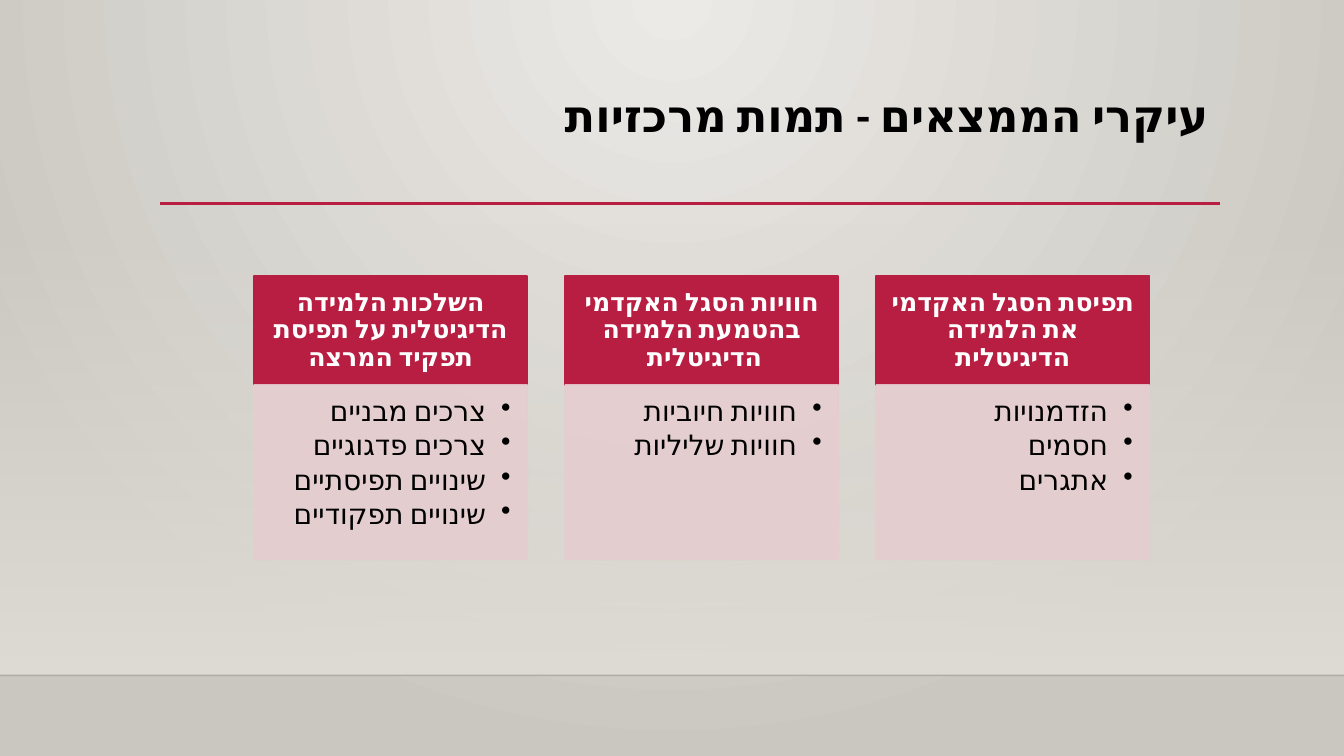
from lxml import etree
from pptx import Presentation
from pptx.dml.color import RGBColor
from pptx.enum.shapes import MSO_CONNECTOR, MSO_SHAPE
from pptx.enum.text import MSO_ANCHOR, PP_ALIGN
from pptx.oxml import parse_xml
from pptx.oxml.ns import nsdecls, qn
from pptx.util import Inches, Pt

RECT = MSO_SHAPE.RECTANGLE
LINE = MSO_CONNECTOR.STRAIGHT
RIGHT, CENTER = PP_ALIGN.RIGHT, PP_ALIGN.CENTER
TOP, MIDDLE = MSO_ANCHOR.TOP, MSO_ANCHOR.MIDDLE

TITLE = "עיקרי הממצאים - תמות מרכזיות"
THEMES = [
    ("תפיסת הסגל האקדמי את הלמידה הדיגיטלית", "Calibri",
     ["הזדמנויות", "חסמים", "אתגרים"]),
    ("חוויות הסגל האקדמי בהטמעת הלמידה הדיגיטלית ", "Cabin",
     ["חוויות חיוביות", "חוויות שליליות"]),
    ("השלכות הלמידה הדיגיטלית על תפיסת תפקיד המרצה", "Cabin",
     ["צרכים מבניים", "צרכים פדגוגיים", "שינויים תפיסתיים", "שינויים תפקודיים"]),
]
COLORS = {"red": "B71E42", "pink": "E6CDCF", "black": "000000", "white": "FFFFFF",
          "light": "ECEAE7", "dark": "CAC7C1", "wall": "DFDBD5", "edge": "000001"}

WIDE, HIGH = 13.33, 7.5
FLOOR = 6.7
WALL = 2.21
LAST, STEP = 8.69, 3.085
COL = 2.71
HEAD_Y, HEAD_H, BODY_H = 2.74, 1.08, 1.73


def rgb(name):
    return RGBColor.from_string(COLORS[name])


def fade(fill, percent):
    tone = fill.find(".//" + qn("a:srgbClr"))
    etree.SubElement(tone, qn("a:alpha"), val=str(percent * 1000))


def blend(first, last, clear, shade):
    alpha = '<a:alpha val="0"/>' if clear else ""
    return parse_xml(
        f'<a:gradFill {nsdecls("a")} rotWithShape="1"><a:gsLst>'
        f'<a:gs pos="0"><a:srgbClr val="{COLORS[first]}">{alpha}</a:srgbClr></a:gs>'
        f'<a:gs pos="100000"><a:srgbClr val="{COLORS[last]}"/></a:gs>'
        f'</a:gsLst>{shade}</a:gradFill>')


def swap(root, grad):
    old = root.find(qn("a:solidFill"))
    root.replace(old, grad)


def add_box(x, y, w, h, color):
    box = slide.shapes.add_shape(RECT, Inches(x), Inches(y), Inches(w), Inches(h))
    box.shadow.inherit = False
    box.fill.solid()
    box.fill.fore_color.rgb = rgb(color)
    return box


def add_line(x1, x2, y, color, width):
    line = slide.shapes.add_connector(LINE, Inches(x1), Inches(y), Inches(x2), Inches(y))
    line.line.color.rgb = rgb(color)
    line.line.width = Pt(width)
    etree.SubElement(line._element.spPr, qn("a:effectLst"))
    return line


def set_frame(frame, anchor, pads):
    frame.word_wrap = True
    frame.vertical_anchor = anchor
    (frame.margin_left, frame.margin_top,
     frame.margin_right, frame.margin_bottom) = [Inches(p) for p in pads]


def write(frame, lines, align, face, size, color, bold=False, after=0, bullet=False):
    for i, text in enumerate(lines):
        para = frame.add_paragraph() if i else frame.paragraphs[0]
        props = para._p.get_or_add_pPr()
        props.set("rtl", "1")
        if bullet:
            para.level = 1
            props.set("marL", str(Inches(0.25)))
            props.set("indent", str(Inches(-0.25)))
            etree.SubElement(props, qn("a:buChar"), char="•")
        para.alignment = align
        para.line_spacing = 0.9
        para.space_before = Pt(0)
        para.space_after = Pt(after)
        run = para.add_run()
        run.text = text
        font = run.font
        font.name, font.size, font.bold = face, Pt(size), bold
        font.color.rgb = rgb(color)
        marks = run._r.get_or_add_rPr()
        marks.set("lang", "he-IL")
        etree.SubElement(marks, qn("a:cs"), typeface=face)


deck = Presentation()
deck.slide_width, deck.slide_height = Inches(WIDE), Inches(HIGH)
slide = deck.slides.add_slide(deck.slide_layouts[5])

back = slide.background.fill
back.solid()
back.fore_color.rgb = rgb("light")
swap(slide._element.cSld.find(".//" + qn("p:bgPr")),
     blend("light", "dark", False,
           '<a:path path="circle"><a:fillToRect l="43000" r="43000" b="100000"/></a:path>'))

wall = add_box(0, WALL, WIDE, FLOOR - WALL, "wall")
wall.line.fill.background()
swap(wall._element.spPr, blend("wall", "wall", True, '<a:lin ang="5400000" scaled="0"/>'))
edge = add_line(0, WIDE, FLOOR, "edge", 1)
fade(edge._element.spPr, 20)
add_line(1.59, 12.1, 2.02, "red", 2.5)

title = slide.shapes.title
title.left, title.top = Inches(1.59), Inches(0.88)
title.width, title.height = Inches(10.5), Inches(1.15)
set_frame(title.text_frame, TOP, (0.1, 0.05, 0.1, 0.05))
write(title.text_frame, [TITLE], RIGHT, "Calibri", 32, "black", True)

for i, (name, face, points) in enumerate(THEMES):
    x = LAST - i * STEP
    head = add_box(x, HEAD_Y, COL, HEAD_H, "red")
    body = add_box(x, HEAD_Y + HEAD_H, COL, BODY_H, "pink")
    for box, color in ((head, "red"), (body, "pink")):
        box.line.color.rgb = rgb(color)
        box.line.width = Pt(1.25)
    fade(body._element.spPr, 90)
    fade(body._element.spPr.find(qn("a:ln")), 90)
    set_frame(head.text_frame, MIDDLE, (0.14, 0.08, 0.14, 0.08))
    write(head.text_frame, [name], CENTER, face, 18, "white", True, 6.3)
    set_frame(body.text_frame, TOP, (0.12, 0.12, 0.16, 0.17))
    write(body.text_frame, points, RIGHT, "Cabin", 20, "black", after=3, bullet=True)

deck.save("out.pptx")
